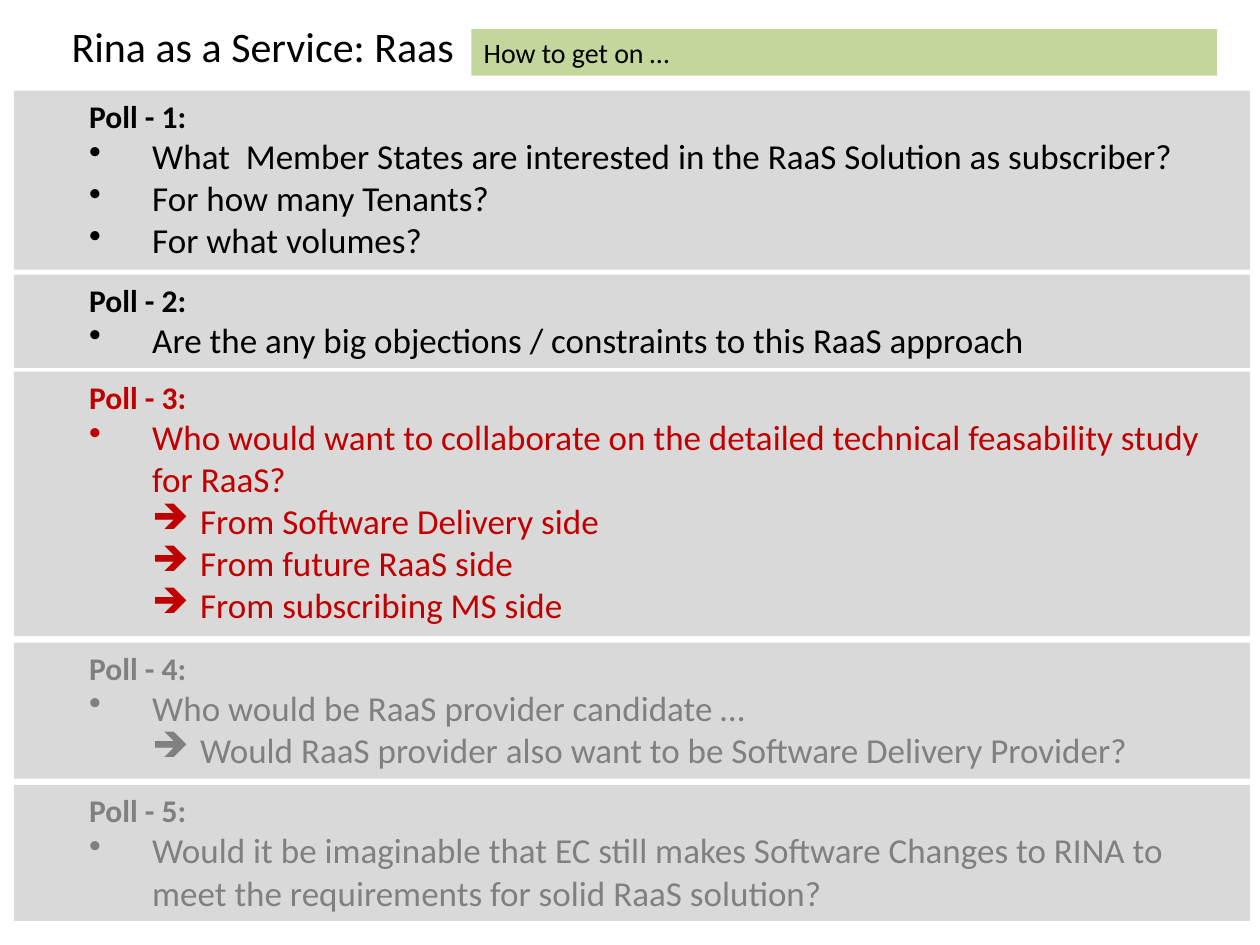
import pptx
import pptx.dml.color
import pptx.enum.shapes
import pptx.enum.text
import pptx.oxml.ns
import pptx.util
from lxml import etree

Inches = pptx.util.Inches
RGBColor = pptx.dml.color.RGBColor

BLACK = RGBColor(0x00, 0x00, 0x00)
RED = RGBColor(0xC0, 0x00, 0x00)
GRAY = RGBColor(0x80, 0x80, 0x80)
PANEL = RGBColor(0xD9, 0xD9, 0xD9)
GREEN = RGBColor(0xC3, 0xD6, 0x9B)

TITLE = "Rina as a Service: Raas"
SUBTITLE = "How to get on …"
HEAD, ITEM, SUBITEM = "head", "item", "subitem"
STYLES = {
    HEAD: dict(level=1, margin=0.5, indent=0, bullet=None, size=18, bold=True),
    ITEM: dict(level=1, margin=1, indent=-0.5, bullet="•", size=20, bold=False),
    SUBITEM: dict(level=2, margin=1.38, indent=-0.38, bullet="➔", size=20, bold=False),
}
POLLS = [
    (0.72, 3, BLACK, [
        (HEAD, "Poll - 1:"),
        (ITEM, "What  Member States are interested in the RaaS Solution as subscriber?"),
        (ITEM, "For how many Tenants?"),
        (ITEM, "For what volumes?"),
    ]),
    (2.18, 1, BLACK, [
        (HEAD, "Poll - 2:"),
        (ITEM, "Are the any big objections / constraints to this RaaS approach"),
    ]),
    (2.95, 5, RED, [
        (HEAD, "Poll - 3:"),
        (ITEM, "Who would want to collaborate on the detailed technical "
               "feasability study for RaaS?"),
        (SUBITEM, "From Software Delivery side"),
        (SUBITEM, "From future RaaS side"),
        (SUBITEM, "From subscribing MS side"),
    ]),
    (5.1, 2, GRAY, [
        (HEAD, "Poll - 4:"),
        (ITEM, "Who would be RaaS provider candidate …"),
        (SUBITEM, "Would RaaS provider also want to be Software Delivery Provider?"),
    ]),
    (6.23, 2, GRAY, [
        (HEAD, "Poll - 5:"),
        (ITEM, "Would it be imaginable that EC still makes Software Changes to RINA "
               "to meet the requirements for solid RaaS solution?"),
    ]),
]
PANEL_LEFT, PANEL_WIDTH = 0.11, 9.81
HEAD_HEIGHT, LINE_HEIGHT = 0.4, 0.34


def add_run(para, text, size, color, bold=False):
    para.alignment = pptx.enum.text.PP_ALIGN.LEFT
    run = para.add_run()
    run.text = text
    run.font.name = "Calibri"
    run.font.size = pptx.util.Pt(size)
    run.font.bold = bold
    run.font.color.rgb = color


def add_panel(slide, left, top, width, height, fill):
    panel = slide.shapes.add_shape(
        pptx.enum.shapes.MSO_SHAPE.RECTANGLE,
        Inches(left), Inches(top), Inches(width), Inches(height))
    panel.shadow.inherit = False
    panel.fill.solid()
    panel.fill.fore_color.rgb = fill
    panel.line.fill.background()
    frame = panel.text_frame
    frame.word_wrap = True
    frame.auto_size = pptx.enum.text.MSO_AUTO_SIZE.SHAPE_TO_FIT_TEXT
    frame.vertical_anchor = pptx.enum.text.MSO_ANCHOR.TOP
    return frame


def add_poll_line(para, kind, text, color):
    style = STYLES[kind]
    para.level = style["level"]
    properties = para._p.get_or_add_pPr()
    properties.set("marL", str(Inches(style["margin"])))
    properties.set("indent", str(Inches(style["indent"])))
    if style["bullet"]:
        bullet = etree.SubElement(properties, pptx.oxml.ns.qn("a:buChar"))
        bullet.set("char", style["bullet"])
    add_run(para, text, style["size"], color, style["bold"])


def main():
    deck = pptx.Presentation()
    deck.slide_width, deck.slide_height = Inches(10), Inches(7.5)
    slide = deck.slides.add_slide(deck.slide_layouts[6])

    title = slide.shapes.add_textbox(
        Inches(0.47), Inches(0.11), Inches(3.26), Inches(0.5)).text_frame
    title.word_wrap = False
    title.auto_size = pptx.enum.text.MSO_AUTO_SIZE.SHAPE_TO_FIT_TEXT
    add_run(title.paragraphs[0], TITLE, 24, BLACK)

    subtitle = add_panel(slide, 3.74, 0.23, 5.92, 0.37, GREEN)
    add_run(subtitle.paragraphs[0], SUBTITLE, 16, BLACK)

    for top, line_count, color, lines in POLLS:
        height = HEAD_HEIGHT + line_count * LINE_HEIGHT
        frame = add_panel(slide, PANEL_LEFT, top, PANEL_WIDTH, height, PANEL)
        for index, (kind, text) in enumerate(lines):
            para = frame.add_paragraph() if index else frame.paragraphs[0]
            add_poll_line(para, kind, text, color)

    deck.save("out.pptx")


if __name__ == "__main__":
    main()
